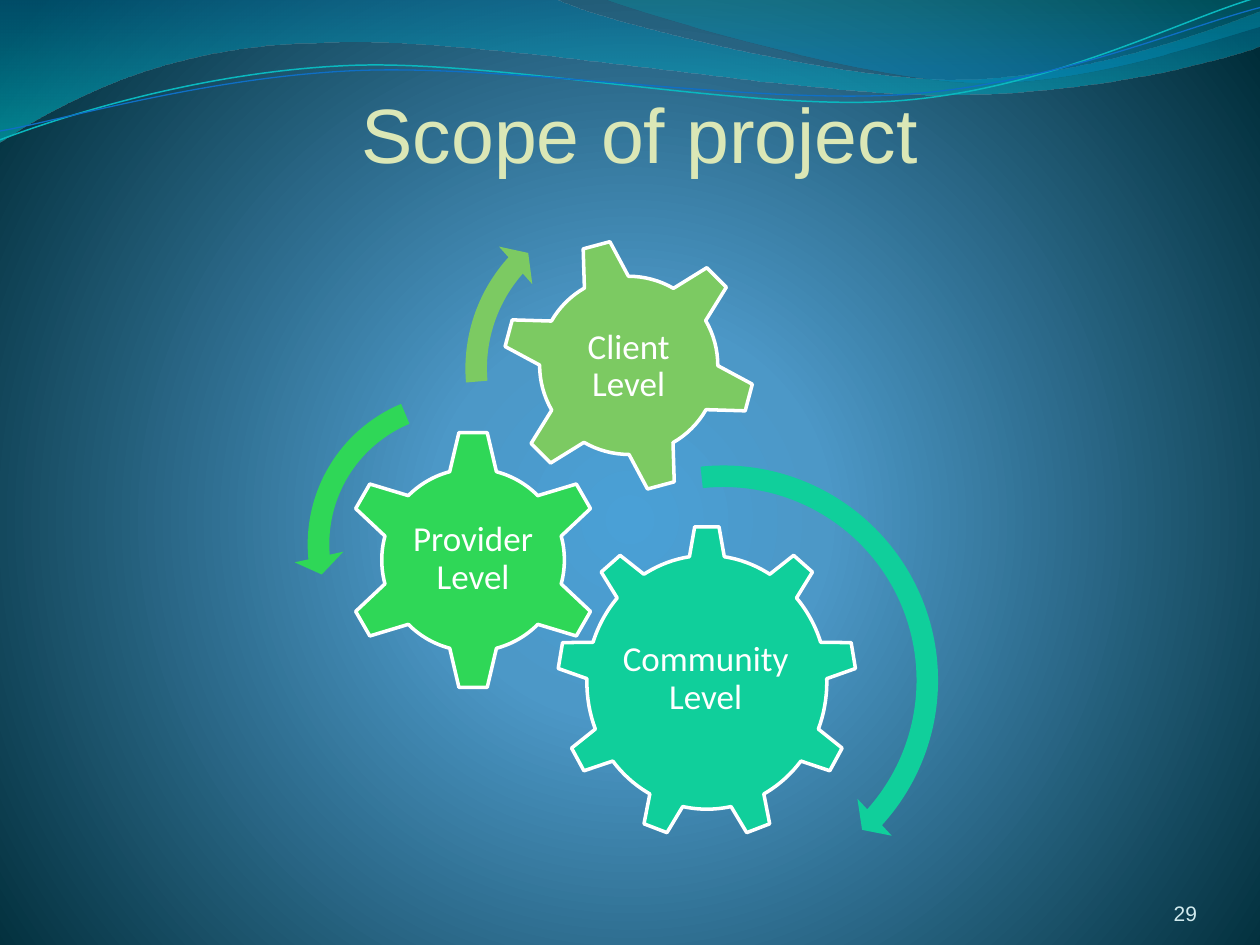
from dataclasses import dataclass
from math import cos, radians, sin
from typing import NamedTuple

from lxml.etree import SubElement
from pptx import Presentation
from pptx.dml.color import RGBColor
from pptx.enum.shapes import MSO_SHAPE as Shape
from pptx.enum.text import MSO_ANCHOR as Anchor, PP_ALIGN as Align
from pptx.oxml.ns import qn
from pptx.util import Emu, Inches, Pt

COLS, ROWS = 100, 75
CELL = Inches(0.1)


@dataclass(frozen=True)
class Theme:
    heading_font: str = "Arial"
    label_font: str = "Calibri"
    title_size: float = 44
    label_size: float = 20
    number_size: float = 12
    gear_outline: float = 2
    title: str = "DBE7B6"
    number: str = "D1EAEE"
    white: str = "FFFFFF"
    community: str = "10CF9B"
    provider: str = "2FD757"
    client: str = "7CCA62"
    teal_line: str = "0AB8BF"
    blue_line: str = "0F6FC6"


class Point(NamedTuple):
    """A position in grid cells."""
    x: float
    y: float

    def turned(self, center: "Point", degrees: float) -> "Point":
        dx, dy, a = self.x - center.x, self.y - center.y, radians(degrees)
        return Point(center.x + dx * cos(a) - dy * sin(a),
                     center.y + dx * sin(a) + dy * cos(a))

    def emu(self) -> tuple[int, int]:
        return round(self.x * CELL), round(self.y * CELL)


class Box(NamedTuple):
    """A rectangle in grid cells."""
    col: float
    row: float
    cols: float
    rows: float

    def emu(self) -> list[Emu]:
        return [Emu(round(v * CELL)) for v in self]


class Stop(NamedTuple):
    position: int
    color: str
    opacity: int = 100


@dataclass(frozen=True)
class Gear:
    label: str
    color: str
    shape: Shape
    box: Box
    label_box: Box
    arrow: Shape
    arrow_box: Box
    arrow_adjust: tuple[float, ...]
    rotation: float = 0


@dataclass(frozen=True)
class Wave:
    """Steps hold one point for a straight line, three for a cubic curve."""
    start: tuple[float, float]
    steps: tuple[tuple[float, ...], ...]
    stops: tuple[Stop, ...] = ()
    line: str = ""
    width: float = 0
    rotation: float = 0
    center: Point = Point(0, 0)


T = Theme()

BACKGROUND = (Stop(0, "4AA0D6"), Stop(25, "4C98C7"), Stop(100, "002C38"))

WAVES = (
    Wave((0, -0.1),
         ((44, -0.1), (47.6, 1.7, 66.4, 6.3, 75.8, 6.3),
          (85.3, 6.3, 95.8, 2.6, 100, 0.9), (100.1, 3.6),
          (98.3, 4.4, 87, 7.6, 74.6, 7.5), (62.2, 7.5, 38.2, 2.8, 25.7, 3.4),
          (12.9, 3.5, 4.6, 8.3, -0.1, 11.3), (0, -0.1)),
         stops=(Stop(0, "0074A1", 45), Stop(100, "00C6CF", 55))),
    Wave((47.9, -0.1),
         ((50.9, 1.1, 68.2, 6.2, 76.9, 6.5),
          (85.6, 6.9, 96.1, 3.2, 100, 2.1), (100, 0), (47.9, -0.1)),
         stops=(Stop(0, "00A1A9", 30), Stop(80, "008BBF", 45))),
    Wave((0, 11.1),
         ((4.8, 9.3, 15.8, 5.7, 27.7, 5.2), (39.5, 4.7, 59.3, 8.9, 71.3, 8),
          (83.3, 7.1, 93.8, 1.5, 99.8, -0.2)),
         line=T.teal_line, width=0.85, rotation=357.3, center=Point(49.9, 5.75)),
    Wave((0, 10.4),
         ((4.7, 9.6, 16.4, 6.1, 28.3, 5.6), (40.3, 5.1, 59.7, 8.3, 71.7, 7.5),
          (83.6, 6.7, 94.1, 2.1, 100, 0.6)),
         line=T.blue_line, width=0.75, rotation=357.3, center=Point(49.95, 5.9)),
)

GEARS = (
    Gear("Community Level", T.community, Shape.GEAR_9,
         Box(44.2, 41.7, 23.8, 24.9), Box(48.9, 47.4, 14.2, 13),
         Shape.CIRCULAR_ARROW, Box(39.2, 35.8, 36.4, 36.4),
         (0.047, 2.99, 25.275, 158.37, 0.055)),
    Gear("Provider Level", T.provider, Shape.GEAR_6,
         Box(27.2, 34.1, 20.7, 20.7), Box(32.4, 39.3, 10.3, 10.2),
         Shape.LEFT_CIRCULAR_ARROW, Box(23.3, 30, 26.4, 26.4),
         (0.065, 4.3, 104.891, 148.378, 0.075)),
    Gear("Client Level", T.client, Shape.GEAR_6,
         Box(39.8, 18.9, 20.2, 20.2), Box(44.2, 23.4, 11.4, 11.4),
         Shape.CIRCULAR_ARROW, Box(35.8, 15, 28.5, 28.5),
         (0.06, 3.941, 133.138, 105.082, 0.07), rotation=345),
)


def set_gradient(parent, stops: tuple[Stop, ...], radial: bool = False) -> None:
    """Replace the solid fill inside parent with a gradient."""
    solid = parent.find(qn("a:solidFill"))
    grad = SubElement(parent, qn("a:gradFill"), rotWithShape="1")
    parent.replace(solid, grad)
    gs_list = SubElement(grad, qn("a:gsLst"))
    for stop in stops:
        gs = SubElement(gs_list, qn("a:gs"), pos=str(stop.position * 1000))
        color = SubElement(gs, qn("a:srgbClr"), val=stop.color)
        if stop.opacity < 100:
            SubElement(color, qn("a:alpha"), val=str(stop.opacity * 1000))
    if radial:
        shade = SubElement(grad, qn("a:path"), {"path": "circle"})
        SubElement(shade, qn("a:fillToRect"),
                   l="10000", t="110000", r="10000", b="100000")
    else:
        SubElement(grad, qn("a:lin"), ang="5400000", scaled="0")


def build_outline(slide, wave: Wave):
    """Join the wave's end points, then bend the three-point steps into curves."""
    def place(step: tuple[float, ...]) -> list[tuple[int, int]]:
        return [Point(*xy).turned(wave.center, -wave.rotation).emu()
                for xy in zip(step[::2], step[1::2])]

    steps = [place(step) for step in wave.steps]
    builder = slide.shapes.build_freeform(*place(wave.start)[0])
    builder.add_line_segments([step[-1] for step in steps], close=bool(wave.stops))
    sp = builder.convert_to_shape()
    for segment, step in zip(list(sp._element.iter(qn("a:lnTo"))), steps):
        if len(step) == 3:
            outline = segment.getparent()
            curve = SubElement(outline, qn("a:cubicBezTo"))
            outline.replace(segment, curve)
            for x, y in step:
                SubElement(curve, qn("a:pt"), x=str(x - sp.left), y=str(y - sp.top))
    sp.rotation = wave.rotation
    return sp


def draw_wave(slide, wave: Wave) -> None:
    sp = build_outline(slide, wave)
    sp.shadow.inherit = False
    if wave.stops:
        sp.fill.solid()
        set_gradient(sp._element.spPr, wave.stops)
        sp.line.fill.background()
    else:
        sp.fill.background()
        sp.line.color.rgb = RGBColor.from_string(wave.line)
        sp.line.width = Pt(wave.width)


def add_shape(slide, kind: Shape, box: Box, color: str):
    sp = slide.shapes.add_shape(kind, *box.emu())
    sp.shadow.inherit = False
    sp.fill.solid()
    sp.fill.fore_color.rgb = RGBColor.from_string(color)
    sp.line.fill.background()
    return sp


def write(sp, text: str, font: str, size: float, color: str, align: Align,
          anchor: Anchor, inset: float = 0, spacing: float = 1) -> None:
    tf = sp.text_frame
    tf.text = text
    tf.word_wrap = True
    tf.vertical_anchor = anchor
    tf.margin_left = tf.margin_right = tf.margin_top = tf.margin_bottom = Inches(inset)
    p = tf.paragraphs[0]
    p.alignment, p.line_spacing = align, spacing
    r = p.runs[0]
    r.font.name, r.font.size = font, Pt(size)
    r.font.color.rgb = RGBColor.from_string(color)


def draw_gear(slide, gear: Gear) -> None:
    sp = add_shape(slide, gear.shape, gear.box, gear.color)
    sp.rotation = gear.rotation
    sp.line.color.rgb = RGBColor.from_string(T.white)
    sp.line.width = Pt(T.gear_outline)
    label = slide.shapes.add_textbox(*gear.label_box.emu())
    write(label, gear.label, T.label_font, T.label_size, T.white,
          Align.CENTER, Anchor.MIDDLE, inset=0.03, spacing=0.9)


def draw_arrow(slide, gear: Gear) -> None:
    sp = add_shape(slide, gear.arrow, gear.arrow_box, gear.color)
    for i, value in enumerate(gear.arrow_adjust):
        sp.adjustments[i] = value


def main() -> None:
    prs = Presentation()
    prs.slide_width, prs.slide_height = COLS * CELL, ROWS * CELL
    slide = prs.slides.add_slide(prs.slide_layouts[5])
    slide.background.fill.solid()
    set_gradient(slide._element.find(".//" + qn("p:bgPr")), BACKGROUND, radial=True)

    for wave in WAVES:
        draw_wave(slide, wave)
    number = slide.shapes.add_textbox(*Box(86.7, 69.5, 8.3, 4).emu())
    write(number, "29", T.heading_font, T.number_size, T.number,
          Align.RIGHT, Anchor.BOTTOM)
    for gear in GEARS:
        draw_gear(slide, gear)
    for gear in GEARS:
        draw_arrow(slide, gear)

    title = slide.shapes.title
    title.left, title.top, title.width, title.height = Box(5.8, 1.7, 90, 12.5).emu()
    write(title, "Scope of project", T.heading_font, T.title_size, T.title,
          Align.CENTER, Anchor.BOTTOM)
    prs.save("out.pptx")


if __name__ == "__main__":
    main()
